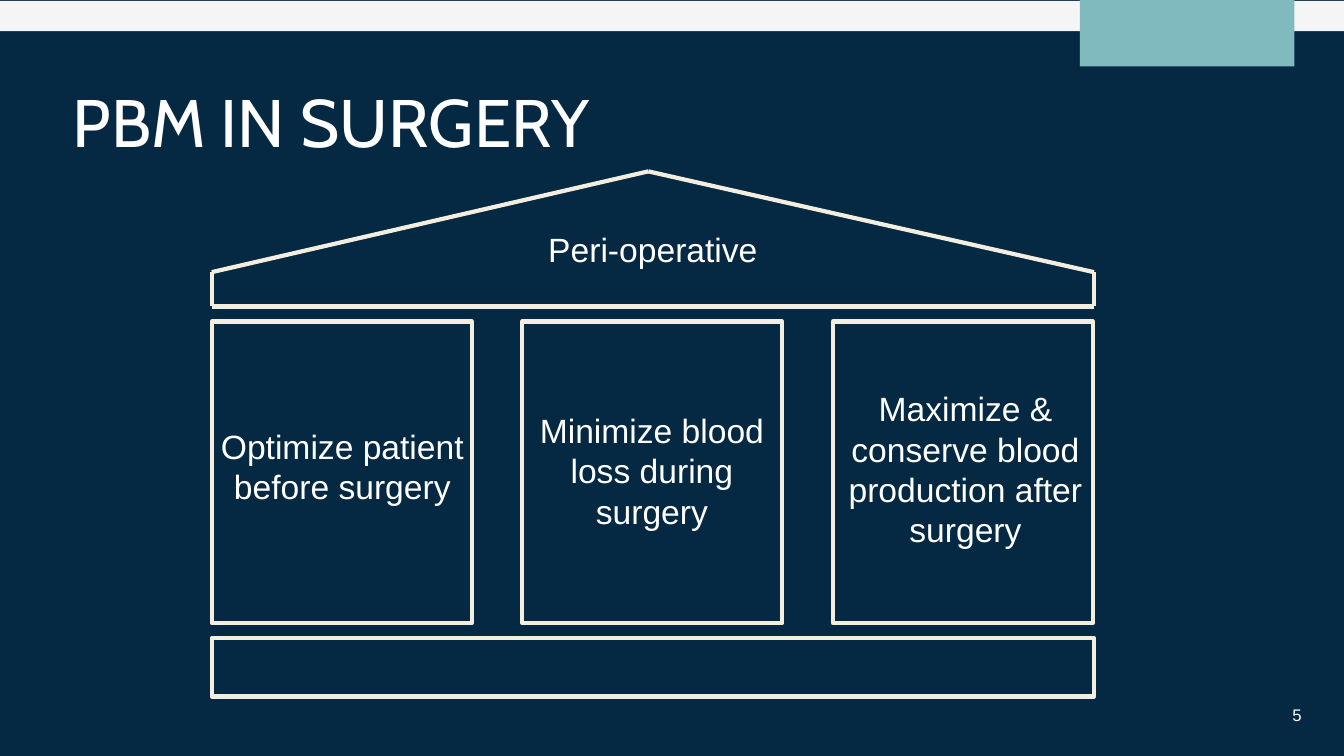
from lxml import etree
from pptx import Presentation
from pptx.dml.color import RGBColor
from pptx.enum.shapes import MSO_CONNECTOR, MSO_SHAPE
from pptx.enum.text import MSO_ANCHOR, MSO_AUTO_SIZE, PP_ALIGN
from pptx.oxml.ns import qn
from pptx.util import Inches, Pt

STRAIGHT = MSO_CONNECTOR.STRAIGHT
RECTANGLE = MSO_SHAPE.RECTANGLE
MIDDLE = MSO_ANCHOR.MIDDLE
GROW = MSO_AUTO_SIZE.SHAPE_TO_FIT_TEXT
LEFT, CENTER, RIGHT = PP_ALIGN.LEFT, PP_ALIGN.CENTER, PP_ALIGN.RIGHT

COLORS = {
    "navy": "052942",
    "strip": "F5F5F5",
    "teal": "80BABE",
    "cream": "F3EEDF",
    "white": "FFFFFF",
}
HOUSE_LEFT, HOUSE_RIGHT = 2.1, 10.85
PILLAR_TOP, PILLAR_WIDTH, PILLAR_HEIGHT, PILLAR_STEP = 3.19, 2.58, 2.99, 3.08
PILLAR_COUNT = 3
EAVES, ROOF_BASE = 2.7, 3.04
ROOF_OUTLINE = [
    (HOUSE_LEFT, ROOF_BASE),
    (HOUSE_LEFT, EAVES),
    (6.43, 1.7),
    (HOUSE_RIGHT, EAVES),
    (HOUSE_RIGHT, ROOF_BASE),
]
PILLAR_LABELS = [
    ("Optimize patient before surgery", (2.02, 4.17, 2.75, 0.91)),
    ("Minimize blood loss during surgery", (5.09, 4.01, 2.75, 1.31)),
    ("Maximize & conserve blood production after surgery", (8.24, 3.79, 2.67, 1.72)),
]


def color(name):
    return RGBColor.from_string(COLORS[name])


def format_paragraph(paragraph, size, align=CENTER, font="Arial"):
    paragraph.alignment = align
    paragraph.font.color.rgb = color("white")
    for attribute, value in {"name": font, "size": Pt(size), "bold": False}.items():
        setattr(paragraph.font, attribute, value)


def add_rectangle(slide, box, fill=None, outline=None):
    rectangle = slide.shapes.add_shape(RECTANGLE, *map(Inches, box))
    rectangle.shadow.inherit = False
    if fill:
        rectangle.fill.solid()
        rectangle.fill.fore_color.rgb = color(fill)
    else:
        rectangle.fill.background()
    if outline:
        rectangle.line.color.rgb = color(outline)
        rectangle.line.width = Pt(3)
    else:
        rectangle.line.fill.background()


def add_roof_line(slide, start, end):
    edge = slide.shapes.add_connector(STRAIGHT, *map(Inches, (*start, *end)))
    edge.line.color.rgb = color("cream")
    edge.line.width = Pt(3)
    etree.SubElement(edge._element.spPr, qn("a:effectLst"))


def add_label(slide, text, box, line_spacing=None):
    label = slide.shapes.add_textbox(*map(Inches, box))
    frame = label.text_frame
    frame.word_wrap = True
    frame.auto_size = GROW
    frame.vertical_anchor = MIDDLE
    frame.text = text
    paragraph = frame.paragraphs[0]
    paragraph.line_spacing = line_spacing
    format_paragraph(paragraph, 24)


def add_title(slide, text):
    title = slide.shapes.title
    place = {"left": 0.62, "top": 0.83, "width": 12.22, "height": 0.83}
    for attribute, value in place.items():
        setattr(title, attribute, Inches(value))
    title.text_frame.text = text
    title.text_frame.vertical_anchor = MIDDLE
    paragraph = title.text_frame.paragraphs[0]
    paragraph.line_spacing = 0.9
    format_paragraph(paragraph, 48, LEFT, "Cabin")


def add_slide_number(slide, number):
    """Add a live slide number field at the bottom right."""
    box = slide.shapes.add_textbox(*map(Inches, (10.11, 6.89, 2.9, 0.4)))
    box.text_frame.word_wrap = True
    box.text_frame.vertical_anchor = MIDDLE
    paragraph = box.text_frame.paragraphs[0]
    format_paragraph(paragraph, 12, RIGHT)
    field = etree.SubElement(
        paragraph._p,
        qn("a:fld"),
        id="{B6F15528-21DE-4FAA-801E-634DDDAF4B2B}",
        type="slidenum",
    )
    etree.SubElement(field, qn("a:rPr"), lang="en-US")
    etree.SubElement(field, qn("a:t")).text = str(number)


def add_house(slide):
    for index in range(PILLAR_COUNT):
        left = HOUSE_LEFT + index * PILLAR_STEP
        add_rectangle(
            slide, (left, PILLAR_TOP, PILLAR_WIDTH, PILLAR_HEIGHT), outline="cream"
        )
    foundation = (HOUSE_LEFT, 6.33, HOUSE_RIGHT - HOUSE_LEFT, 0.58)
    add_rectangle(slide, foundation, outline="cream")
    for text, box in PILLAR_LABELS:
        add_label(slide, text, box)
    for start, end in zip(ROOF_OUTLINE, ROOF_OUTLINE[1:] + ROOF_OUTLINE[:1]):
        add_roof_line(slide, start, end)
    add_label(slide, "Peri-operative", (3.89, 2.27, 5.17, 0.46), line_spacing=0.9)


def main():
    deck = Presentation()
    deck.slide_width, deck.slide_height = Inches(13.33), Inches(7.5)
    # Numbering starts at 5 because this slide is the fifth of its talk.
    deck.element.set("firstSlideNum", "5")
    slide = deck.slides.add_slide(deck.slide_layouts[5])
    slide.background.fill.solid()
    slide.background.fill.fore_color.rgb = color("navy")
    add_rectangle(slide, (0, 0.01, 13.33, 0.3), fill="strip")
    add_rectangle(slide, (10.71, -0.01, 2.13, 0.67), fill="teal")
    add_title(slide, "PBM IN SURGERY")
    add_slide_number(slide, 5)
    add_house(slide)
    deck.save("out.pptx")


if __name__ == "__main__":
    main()
